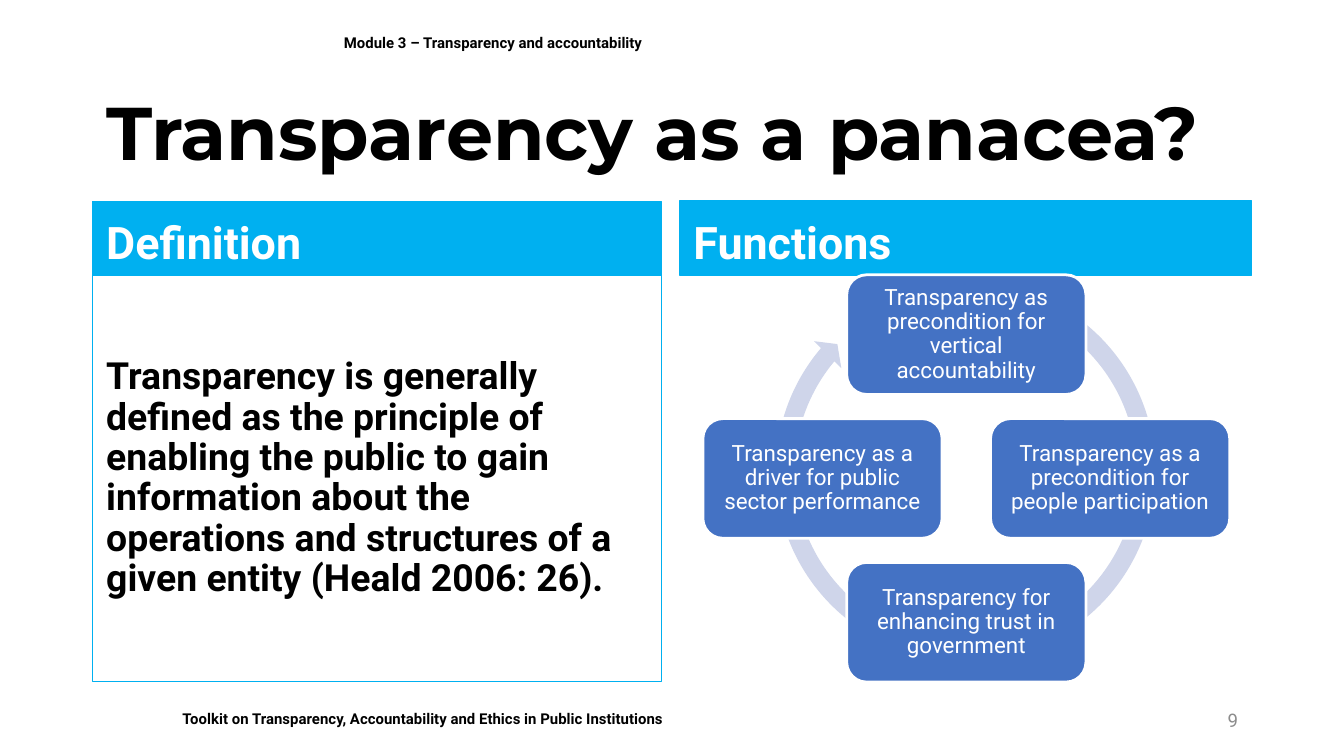
from pptx import Presentation
from pptx.dml.color import RGBColor
from pptx.enum.shapes import MSO_SHAPE as Shape
from pptx.enum.text import MSO_ANCHOR as Anchor, MSO_AUTO_SIZE as AutoSize, PP_ALIGN as Align
from pptx.oxml.xmlchemy import OxmlElement
from pptx.util import Inches, Pt

# Content
TITLE = "Transparency as a panacea?"
HEADINGS = ["Definition", "Functions"]
DEFINITION = (
    "Transparency is generally defined as the principle of enabling the public to gain "
    "information about the operations and structures of a given entity (Heald 2006: 26)."
)
FUNCTIONS = [  # text, column and row step from the centre of the cycle
    ("Transparency as precondition for vertical accountability", 0, -1),
    ("Transparency as a precondition for people participation", 1, 0),
    ("Transparency for enhancing trust in government", 0, 1),
    ("Transparency as a driver for public sector performance", -1, 0),
]
MODULE = "Module 3 – Transparency and accountability"
TOOLKIT = "Toolkit on Transparency, Accountability and Ethics in Public Institutions"
PAGE_NUMBER = "9"

THEME = {
    "heading_font": "Montserrat", "body_font": "Roboto",
    "black": "000000", "white": "FFFFFF", "grey": "8C8C8C",
    "cyan": "00B0F0", "blue": "4472C4", "pale": "CFD5EA",
    "title": 40, "heading": 24, "body": 20, "node": 12, "number": 10, "small": 8,
}

# Layout, in inches
PAGE_WIDTH = 10
PAGE_HEIGHT = PAGE_WIDTH * 9 / 16
LEFT, RIGHT = 0.69, 9.31
PANEL_TOP, PANEL_BOTTOM = 2.05, 5.07
COLUMNS = [(LEFT, 1.5, 4.23), (5.06, 1.49, 4.25)]  # left, top, width
CENTRE_X, CENTRE_Y, STEP = 7.19, 3.56, 1.07
NODE_WIDTH, NODE_HEIGHT = 1.78, 0.89
RING = (5.7, 2.02, 2.97, 2.97)
RING_ADJUST = [0.047, 2.729, 132.093, 177.788, 0.048]


def colour(name):
    return RGBColor.from_string(THEME[name])


def place(box, left, top, width, height):
    box.left, box.top = Inches(left), Inches(top)
    box.width, box.height = Inches(width), Inches(height)


def paint(box, fill=None, line=None, weight=0.75):
    if fill:
        box.fill.solid()
        box.fill.fore_color.rgb = colour(fill)
    else:
        box.fill.background()
    if line:
        box.line.color.rgb = colour(line)
        box.line.width = Pt(weight)
    else:
        box.line.fill.background()


def write(box, text, size, ink="black", bold=False, font="body_font",
          align=Align.LEFT, anchor=Anchor.MIDDLE, spacing=1.0):
    frame = box.text_frame
    frame.word_wrap = True
    frame.auto_size = AutoSize.NONE
    frame.vertical_anchor = anchor
    para = frame.paragraphs[0]
    para.alignment = align
    para.line_spacing = spacing
    para.space_before = Pt(0)
    span = para.add_run()
    span.text = text
    span.font.name = THEME[font]
    span.font.size = Pt(THEME[size])
    span.font.bold = bold
    span.font.color.rgb = colour(ink)


def remove_bullet(para):
    props = para._p.get_or_add_pPr()
    props.set("marL", "0")
    props.set("indent", "0")
    props.append(OxmlElement("a:buNone"))


def add_label(page, area, text, size, **style):
    box = page.shapes.add_textbox(*map(Inches, area))
    write(box, text, size, **style)
    return box


def add_shape(page, kind, area, **look):
    box = page.shapes.add_shape(kind, *map(Inches, area))
    box.shadow.inherit = False
    paint(box, **look)
    return box


def main():
    deck = Presentation()
    deck.slide_width, deck.slide_height = Inches(PAGE_WIDTH), Inches(PAGE_HEIGHT)
    page = deck.slides.add_slide(deck.slide_layouts.get_by_name("Comparison"))
    title, left_head, left_body, right_head, right_body = page.placeholders
    right_body.element.getparent().remove(right_body.element)

    # Footer, page number and module line
    footer = add_label(page, (1.26, 5.23, 7.17, 0.24), TOOLKIT, "small", bold=True)
    paint(footer, "white")
    add_label(page, (RIGHT - 2.25, 5.21, 2.25, 0.3), PAGE_NUMBER, "number",
              ink="grey", align=Align.RIGHT)
    add_label(page, (2.46, 0.1, RIGHT - 2.46, 0.44), MODULE, "small", bold=True)

    # Title
    place(title, LEFT, 0.64, RIGHT - LEFT, 0.75)
    write(title, TITLE, "title", bold=True, font="heading_font", spacing=0.9)

    # Column headings
    for box, text, (left, top, width) in zip((left_head, right_head), HEADINGS, COLUMNS):
        place(box, left, top, width, PANEL_TOP - top)
        paint(box, "cyan", "cyan")
        write(box, text, "heading", ink="white", bold=True,
              anchor=Anchor.BOTTOM, spacing=0.9)

    # Definition panel
    place(left_body, LEFT, PANEL_TOP, COLUMNS[0][2], PANEL_BOTTOM - PANEL_TOP)
    paint(left_body, line="cyan")
    remove_bullet(left_body.text_frame.paragraphs[0])
    write(left_body, DEFINITION, "body", bold=True, spacing=0.9)

    # Cycle of functions
    ring = add_shape(page, Shape.CIRCULAR_ARROW, RING, fill="pale")
    for index, value in enumerate(RING_ADJUST):
        ring.adjustments[index] = value
    for text, column, row in FUNCTIONS:
        area = (CENTRE_X + column * STEP - NODE_WIDTH / 2,
                CENTRE_Y + row * STEP - NODE_HEIGHT / 2, NODE_WIDTH, NODE_HEIGHT)
        node = add_shape(page, Shape.ROUNDED_RECTANGLE, area,
                         fill="blue", line="white", weight=1.5)
        frame = node.text_frame
        frame.margin_left = frame.margin_right = Inches(0.05)
        frame.margin_top = frame.margin_bottom = Inches(0.05)
        write(node, text, "node", ink="white", align=Align.CENTER, spacing=0.9)

    deck.save("out.pptx")


if __name__ == "__main__":
    main()
